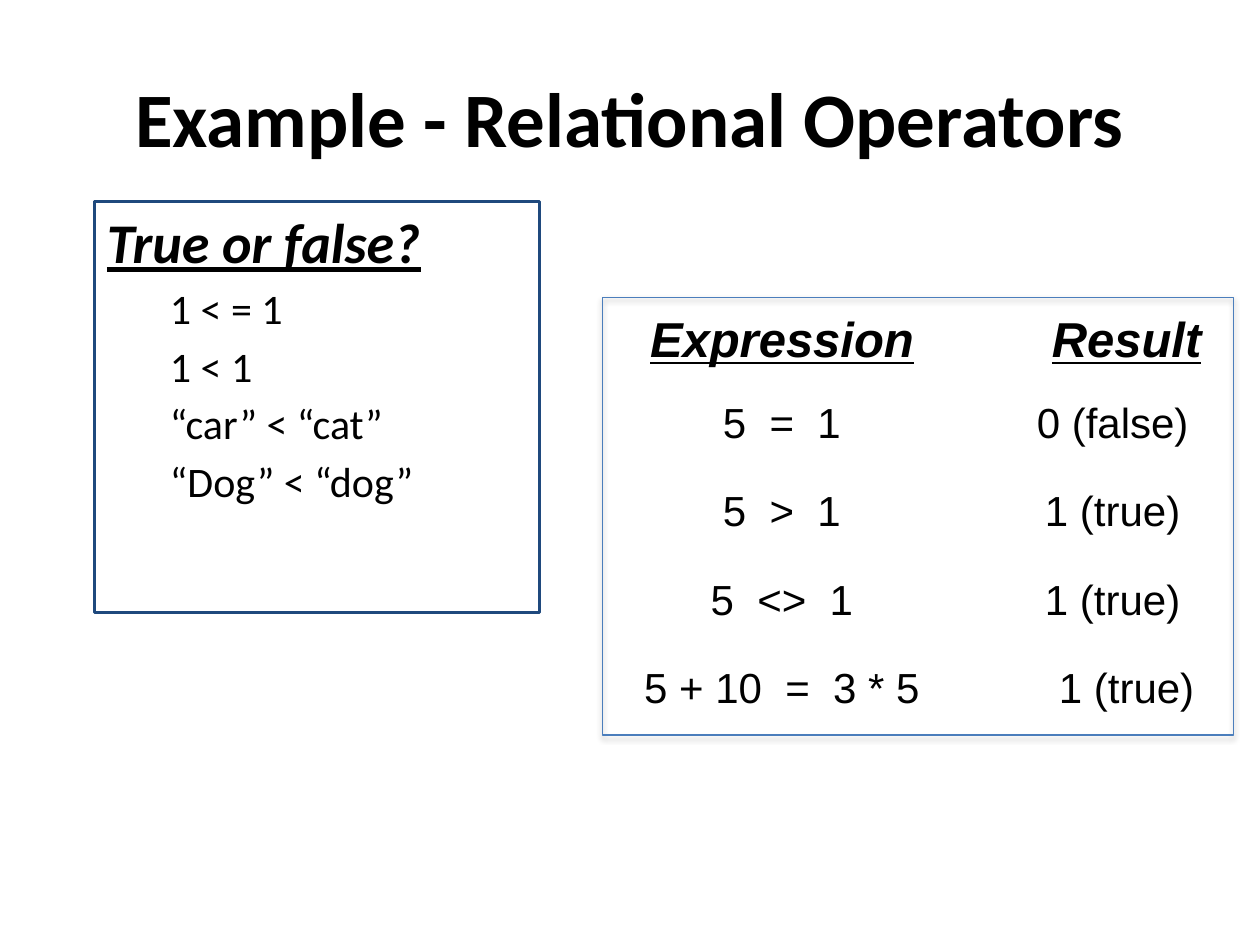
from lxml import etree
from pptx import Presentation
from pptx.dml.color import RGBColor
from pptx.enum.shapes import MSO_SHAPE
from pptx.enum.text import MSO_ANCHOR, PP_ALIGN
from pptx.oxml import parse_xml
from pptx.oxml.ns import nsdecls
from pptx.util import Pt

QUESTIONS = ["1 < = 1", "1 < 1", "“car” < “cat”", "“Dog” < “dog”"]
# Expression, result and shift of the result to the right
RESULT_ROWS = [
    ("Expression", "Result", 8),
    ("5  =  1", "0 (false)", 0),
    ("5  >  1", "1 (true)", 0),
    ("5  <>  1", "1 (true)", 0),
    ("5 + 10  =  3 * 5", "1 (true)", 8),
]


def color(value):
    return RGBColor.from_string(value)


def format_text(paragraph, name, size, heading=False):
    font = paragraph.font
    font.name, font.size = name, Pt(size)
    font.color.rgb = color("000000")
    font.bold = font.italic = font.underline = heading


def add_title(slide, left, top, width, height):
    title = slide.shapes.title
    title.left, title.top, title.width, title.height = map(Pt, (left, top, width, height))
    frame = title.text_frame
    frame.text = "Example - Relational Operators"
    frame.vertical_anchor = MSO_ANCHOR.MIDDLE
    paragraph = frame.paragraphs[0]
    paragraph.alignment = PP_ALIGN.CENTER
    format_text(paragraph, "Calibri", 44)
    paragraph.font.bold = True


def add_questions(slide, left, top, width, height):
    box = slide.shapes.add_textbox(Pt(left), Pt(top), Pt(width), Pt(height))
    box.line.color.rgb = color("1F497D")
    box.line.width = Pt(1.5)
    frame = box.text_frame
    frame.word_wrap = True
    frame.text = "True or false?"
    format_text(frame.paragraphs[0], "Calibri", 32, heading=True)
    for question in QUESTIONS:
        paragraph = frame.add_paragraph()
        paragraph.text = question
        paragraph.level = 1
        paragraph.space_before = Pt(4.2)
        format_text(paragraph, "Calibri", 24)
        # Hanging indent
        properties = paragraph._p.get_or_add_pPr()
        properties.set("marL", str(Pt(58.5)))
        properties.set("indent", str(Pt(-22.5)))


def add_cell(shapes, text, left, top, width, height, heading):
    cell = shapes.add_textbox(Pt(left), Pt(top), Pt(width), Pt(height))
    frame = cell.text_frame
    frame.word_wrap = True
    frame.text = text
    paragraph = frame.paragraphs[0]
    paragraph.alignment = PP_ALIGN.CENTER
    format_text(paragraph, "Arial", 28 if heading else 24, heading)


def add_results(slide, left, top, width, height):
    # Grid of expressions and results
    group = slide.shapes.add_group_shape()
    grid_left, grid_top = left - 14.4, top + 2.8
    expression_width, result_width, row_height = 234, 144, 50.4
    for index, (expression, result, shift) in enumerate(RESULT_ROWS):
        row_top = grid_top + index * row_height
        heading = index == 0
        add_cell(group.shapes, expression, grid_left, row_top,
                 expression_width, row_height, heading)
        add_cell(group.shapes, result, grid_left + expression_width + shift, row_top,
                 result_width, row_height, heading)

    # Frame with a soft shadow below
    border = slide.shapes.add_shape(
        MSO_SHAPE.RECTANGLE, Pt(left), Pt(top), Pt(width), Pt(height))
    border.fill.background()
    border.line.color.rgb = color("4B7EBC")
    border.line.width = Pt(0.75)
    border.shadow.inherit = False
    effects = border._element.spPr.find("{*}effectLst")
    shadow = parse_xml(
        f'<a:outerShdw {nsdecls("a")} blurRad="{Pt(3.1)}" dist="{Pt(1.8)}" '
        'dir="5400000" rotWithShape="0"/>')
    shadow_color = etree.SubElement(shadow, shadow.tag.replace("outerShdw", "srgbClr"), val="000000")
    etree.SubElement(shadow_color, shadow.tag.replace("outerShdw", "alpha"), val="35000")
    effects.append(shadow)


def main():
    presentation = Presentation()
    presentation.slide_width, presentation.slide_height = Pt(720), Pt(540)
    slide = presentation.slides.add_slide(presentation.slide_layouts[5])
    add_title(slide, 36, 21.6, 648, 90)
    add_questions(slide, 54, 115.2, 254.4, 234.8)
    add_results(slide, 344.2, 170, 360.6, 250)
    presentation.save("out.pptx")


if __name__ == "__main__":
    main()
